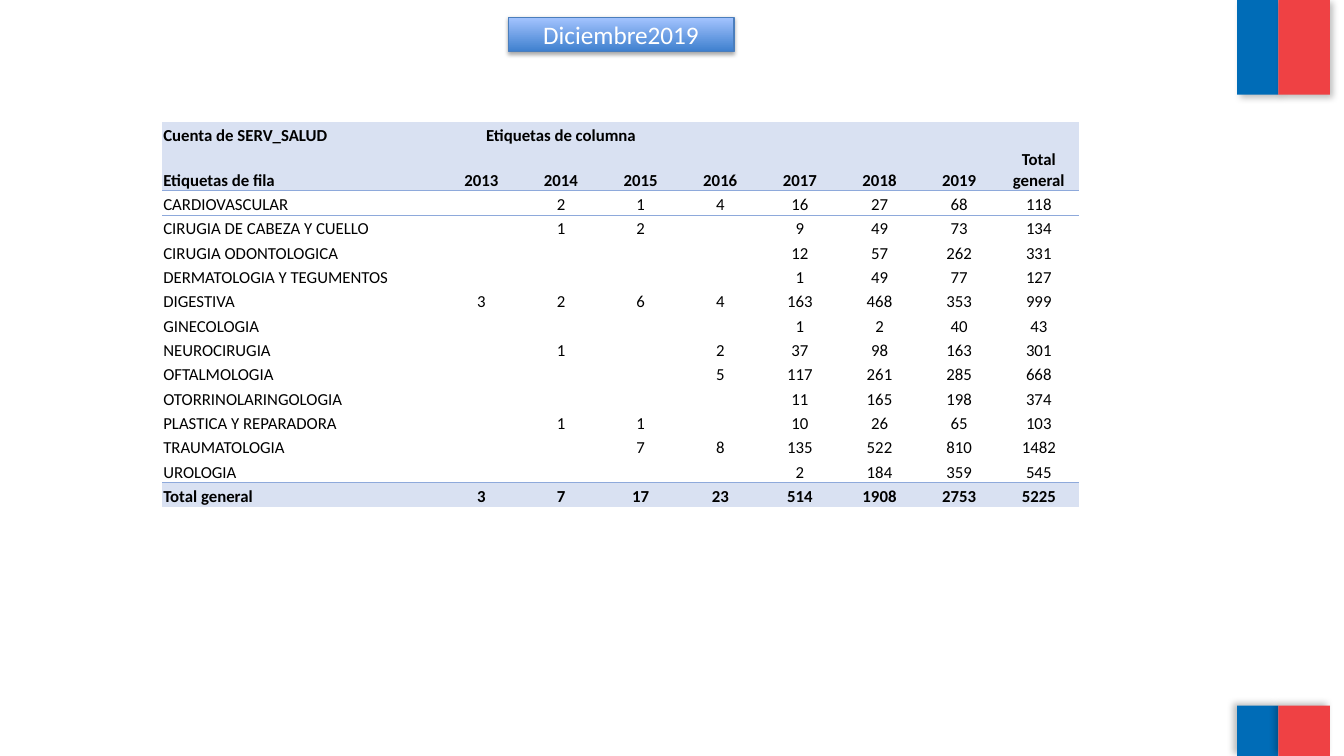
import pptx
import pptx.util
import pptx.dml.color
import pptx.enum.shapes
import pptx.enum.text
import pptx.oxml
import pptx.oxml.ns
from lxml import etree
from pptx.util import Inches

RGBColor = pptx.dml.color.RGBColor
BLUE = RGBColor(0x00, 0x6C, 0xB7)
RED = RGBColor(0xEF, 0x41, 0x44)
TITLE_DARK = RGBColor(0x3F, 0x80, 0xCE)
TITLE_LIGHT = RGBColor(0xA4, 0xC4, 0xFF)
TITLE_LINE = RGBColor(0x4B, 0x7E, 0xBC)
BAND = RGBColor(0xD9, 0xE1, 0xF2)
RULE = RGBColor(0x8E, 0xA9, 0xDB)
WHITE = RGBColor(0xFF, 0xFF, 0xFF)
BLACK = RGBColor(0x00, 0x00, 0x00)
NAMESPACE = pptx.oxml.ns.nsdecls("a")
NO_STYLE = "{2D5ABB26-0587-4C30-8999-92F81FD0307C}"


def add_shadow(shape, opacity, blur, distance, angle):
    shape._element.spPr.append(pptx.oxml.parse_xml(
        f'<a:effectLst {NAMESPACE}><a:outerShdw blurRad="{pptx.util.Pt(blur)}" '
        f'dist="{pptx.util.Pt(distance)}" dir="{angle * 60000}" algn="ctr" rotWithShape="0">'
        f'<a:srgbClr val="{BLACK}"><a:alpha val="{opacity * 1000}"/></a:srgbClr>'
        f'</a:outerShdw></a:effectLst>'))


def add_border(cell, side):
    cell._tc.get_or_add_tcPr().insert(0, pptx.oxml.parse_xml(
        f'<a:{side} {NAMESPACE} w="{pptx.util.Pt(0.5)}"><a:solidFill>'
        f'<a:srgbClr val="{RULE}"/></a:solidFill></a:{side}>'))


presentation = pptx.Presentation()
presentation.slide_width = Inches(13.33)
presentation.slide_height = Inches(7.5)
slide = presentation.slides.add_slide(presentation.slide_layouts[5])

# Blue and red blocks in the right corners
for top, height, angle in [(0, 0.94, 45), (7, 0.5, 215)]:
    for left, width, color in [(12.27, 0.41, BLUE), (12.68, 0.51, RED)]:
        block = slide.shapes.add_shape(
            pptx.enum.shapes.MSO_SHAPE.RECTANGLE,
            Inches(left), Inches(top), Inches(width), Inches(height))
        block.fill.solid()
        block.fill.fore_color.rgb = color
        block.line.fill.background()
        add_shadow(block, 25, 5, 3, angle)

# Title in a rounded button
title = slide.shapes.title
title.left, title.top = Inches(5.04), Inches(0.17)
title.width, title.height = Inches(2.24), Inches(0.34)
title._element.spPr.append(pptx.oxml.parse_xml(
    f'<a:prstGeom {NAMESPACE} prst="roundRect"><a:avLst/></a:prstGeom>'))
title.fill.gradient()
title.fill.gradient_angle = 90
for stop, color in zip(title.fill.gradient_stops, [TITLE_DARK, TITLE_LIGHT]):
    stop.color.rgb = color
title.line.color.rgb = TITLE_LINE
title.line.width = pptx.util.Pt(0.75)
add_shadow(title, 35, 3.1, 1.8, 90)
title_frame = title.text_frame
title_frame.text = "Diciembre2019"
title_frame.auto_size = pptx.enum.text.MSO_AUTO_SIZE.NONE
title_frame.vertical_anchor = pptx.enum.text.MSO_ANCHOR.MIDDLE
title_frame.margin_top = title_frame.margin_bottom = 0
title_paragraph = title_frame.paragraphs[0]
title_paragraph.alignment = pptx.enum.text.PP_ALIGN.CENTER
title_font = title_paragraph.runs[0].font
title_font.name = "Calibri"
title_font.size = pptx.util.Pt(18)
title_font.color.rgb = WHITE

# Table of cases by specialty and year
ROWS = [
    ["Cuenta de SERV_SALUD", "Etiquetas de columna", "", "", "", "", "", "", ""],
    ["Etiquetas de fila", 2013, 2014, 2015, 2016, 2017, 2018, 2019, "Total general"],
    ["CARDIOVASCULAR", "", 2, 1, 4, 16, 27, 68, 118],
    ["CIRUGIA DE CABEZA Y CUELLO", "", 1, 2, "", 9, 49, 73, 134],
    ["CIRUGIA ODONTOLOGICA", "", "", "", "", 12, 57, 262, 331],
    ["DERMATOLOGIA Y TEGUMENTOS", "", "", "", "", 1, 49, 77, 127],
    ["DIGESTIVA", 3, 2, 6, 4, 163, 468, 353, 999],
    ["GINECOLOGIA", "", "", "", "", 1, 2, 40, 43],
    ["NEUROCIRUGIA", "", 1, "", 2, 37, 98, 163, 301],
    ["OFTALMOLOGIA", "", "", "", 5, 117, 261, 285, 668],
    ["OTORRINOLARINGOLOGIA", "", "", "", "", 11, 165, 198, 374],
    ["PLASTICA Y REPARADORA", "", 1, 1, "", 10, 26, 65, 103],
    ["TRAUMATOLOGIA", "", "", 7, 8, 135, 522, 810, 1482],
    ["UROLOGIA", "", "", "", "", 2, 184, 359, 545],
    ["Total general", 3, 7, 17, 23, 514, 1908, 2753, 5225],
]
TOTAL_ROW = len(ROWS) - 1
BAND_ROWS = (0, 1, TOTAL_ROW)
BORDERS = {1: "lnB", 2: "lnT", TOTAL_ROW - 1: "lnB", TOTAL_ROW: "lnT"}

table_frame = slide.shapes.add_table(
    len(ROWS), len(ROWS[0]), Inches(1.61), Inches(1.21), Inches(9.09), Inches(3.82))
table = table_frame.table
table.first_row = table.horz_banding = False
table._tbl.tblPr.find(pptx.oxml.ns.qn("a:tableStyleId")).text = NO_STYLE
for index, column in enumerate(table.columns):
    column.width = Inches(2.77 if index == 0 else 0.79)
for index, row in enumerate(table.rows):
    row.height = Inches(0.44) if index == 1 else Inches(3.82 - 0.44) // TOTAL_ROW
table.cell(0, 1).merge(table.cell(0, 3))

for row_index, values in enumerate(ROWS):
    for column_index, value in enumerate(values):
        cell = table.cell(row_index, column_index)
        cell.margin_left = cell.margin_right = cell.margin_top = Inches(0.01)
        cell.margin_bottom = 0
        cell.vertical_anchor = pptx.enum.text.MSO_ANCHOR.BOTTOM
        if row_index in BAND_ROWS:
            cell.fill.solid()
            cell.fill.fore_color.rgb = BAND
        else:
            cell.fill.background()
        if row_index in BORDERS:
            add_border(cell, BORDERS[row_index])
        paragraph = cell.text_frame.paragraphs[0]
        paragraph.text = str(value)
        if column_index > 0:
            paragraph.alignment = pptx.enum.text.PP_ALIGN.CENTER
        for run in paragraph.runs:
            run.font.name = "Calibri"
            run.font.size = pptx.util.Pt(12)
            run.font.bold = row_index in BAND_ROWS
            run.font.color.rgb = BLACK
        # Empty cells keep the same text size, so rows stay low
        if not paragraph.runs:
            etree.SubElement(paragraph._p, pptx.oxml.ns.qn("a:endParaRPr"), sz="1200")

presentation.save("out.pptx")
